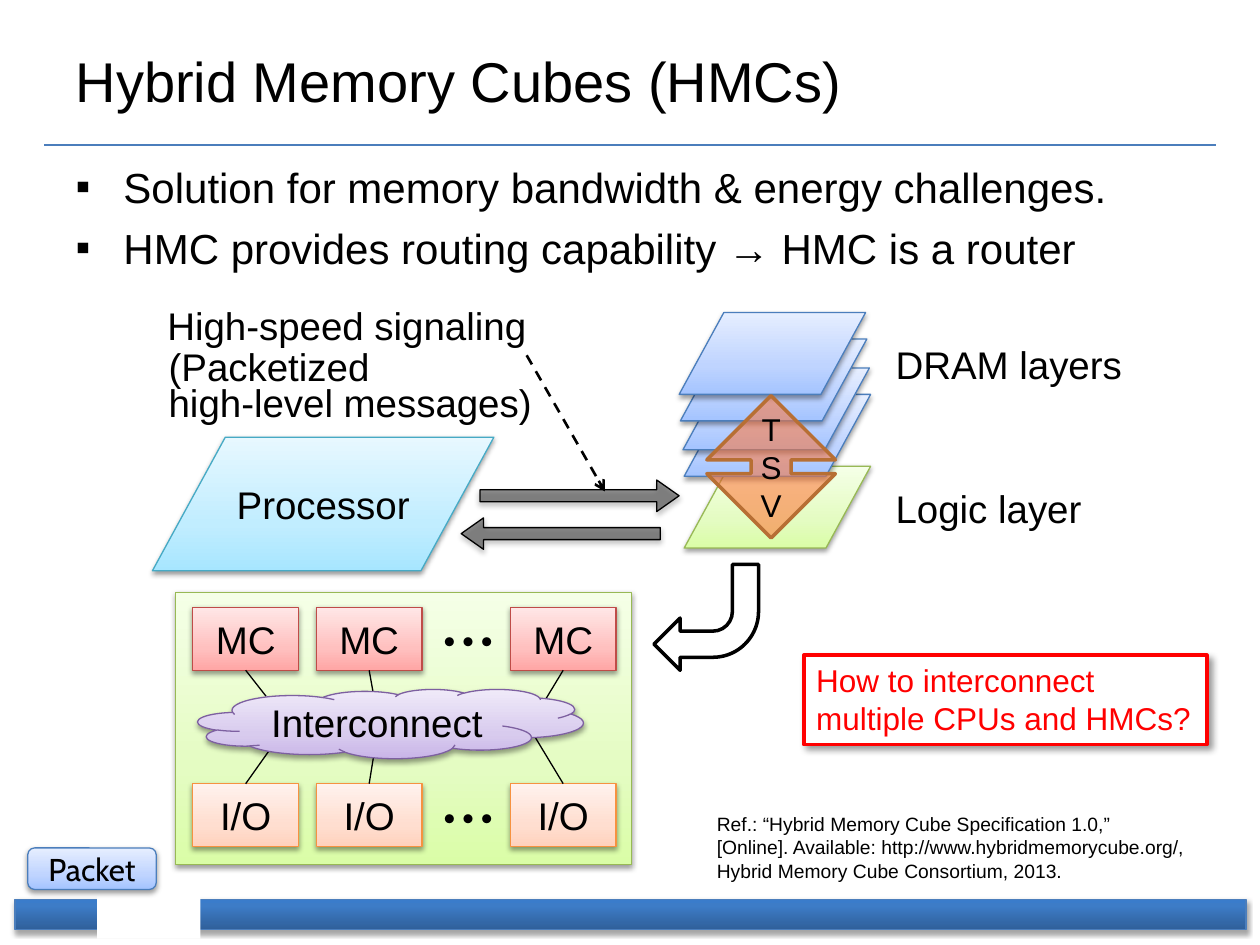
from lxml import etree
from pptx import Presentation
from pptx.dml.color import RGBColor
from pptx.enum import dml, shapes, text
from pptx.oxml import ns
from pptx.util import Inches, Pt

# Content
TITLE = "Hybrid Memory Cubes (HMCs)"
BULLETS = ["Solution for memory bandwidth & energy challenges.",
           "HMC provides routing capability → HMC is a router"]
REFERENCE = ["Ref.: “Hybrid Memory Cube Specification 1.0,” \n"
             "[Online]. Available: http://www.hybridmemorycube.org/,",
             "Hybrid Memory Cube Consortium, 2013."]
QUESTION = "How to interconnect\nmultiple CPUs and HMCs?"
LABELS = [  # text, box, line spacing
    ("DRAM layers", (7.01, 2.66, 2.02, 0.47), None),
    ("Logic layer", (7.01, 3.8, 1.86, 0.47), None),
    ("High-speed signaling", (1.23, 2.35, 3.65, 0.47), None),
    ("(Packetized \nhigh-level messages)", (1.24, 2.74, 3.65, 0.71), 0.8),
]
DRAM_LAYERS = [(5.43, 3.13), (5.42, 2.92), (5.4, 2.69), (5.39, 2.48)]
LAYER_SIZE = (1.48, 0.65)
SLANT = [0.546]

# Logic layer grid: column lefts, unit size, rows, wire ends under the cloud
COLUMNS = [1.53, 2.51, 4.05]
UNIT_W, UNIT_H = 0.84, 0.5
MC_TOP, IO_TOP = 4.82, 6.22
MC_WIRES = [(2.17, 5.6), (2.98, 5.6), (4.3, 5.6)]
IO_WIRES = [(2.17, 5.91), (2.98, 5.91), (4.18, 5.74)]

# Palettes: gradient stops from bottom to top, outline
BLUE = ([(0, "A4C4FF"), (35, "BFD4FF"), (100, "E6EEFF")], "4B7EBC")
GREEN = ([(0, "DAFDA7"), (35, "E4FCC2"), (100, "F5FFE7")], "98B955")
CYAN = ([(0, "A7E6FF"), (35, "C1EDFF"), (100, "E7F8FF")], "46AAC5")
RED = ([(0, "FFA6A5"), (35, "FFC0BF"), (100, "FFE7E7")], "BF4C48")
ORANGE = ([(0, "FFD2BD"), (35, "FFDED0"), (100, "FFF2ED")], "F69240")
PURPLE = ([(0, "C9B5E8"), (35, "D8CBEE"), (100, "F0EAF9")], "7D60A0")
FOOTER = ([(0, "2F5F99"), (80, "3D7CC7"), (100, "3A7CCB")], "4B7EBC")

# Shadows: opacity, blur, distance, direction
SOFT = (38, 3.1, 1.6, 90)
DEEP = (35, 3.1, 1.8, 90)
CORNER = (40, 4, 3, 45)

GEOMETRY = shapes.MSO_SHAPE
CENTER = text.PP_ALIGN.CENTER
MIDDLE = text.MSO_ANCHOR.MIDDLE

deck = Presentation()
deck.slide_width, deck.slide_height = Inches(10), Inches(7.5)
slide = deck.slides.add_slide(deck.slide_layouts[1])


def color(value):
    return RGBColor.from_string(value)


def sub(parent, tag, **attributes):
    child = etree.SubElement(parent, ns.qn(tag))
    for key, value in attributes.items():
        child.set(key, str(value))
    return child


def inches(box):
    return [Inches(value) for value in box]


def write(frame, paragraphs, size, font="Arial", ink="000000", align=None,
          spacing=None, bold=None):
    for i, content in enumerate(paragraphs):
        paragraph = frame.paragraphs[0] if i == 0 else frame.add_paragraph()
        paragraph.alignment = align
        paragraph.line_spacing = spacing
        for j, line in enumerate(content.split("\n")):
            if j:
                paragraph.add_line_break()
            run = paragraph.add_run()
            run.text = line
            run.font.size, run.font.name, run.font.bold = Pt(size), font, bold
            run.font.color.rgb = color(ink)
            sub(run.font._element, "a:ea", typeface=font)


def add_label(content, box, size=22, wrap=True, **style):
    frame = slide.shapes.add_textbox(*inches(box)).text_frame
    frame.word_wrap = wrap
    write(frame, content, size, **style)


def add_block(geometry, box, palette, shadow=None, weight=0.75, adj=(),
              rotation=0, alpha=None, label=None, size=22, font="Arial"):
    fill, outline = palette
    block = slide.shapes.add_shape(geometry, *inches(box))
    block.rotation = rotation
    for i, value in enumerate(adj):
        block.adjustments[i] = value
    if isinstance(fill, str):
        block.fill.solid()
        block.fill.fore_color.rgb = color(fill)
        if alpha:
            rgb = block._element.spPr.find(".//" + ns.qn("a:srgbClr"))
            sub(rgb, "a:alpha", val=alpha * 1000)
    else:
        block.fill.gradient()
        gradient = block._element.spPr.find(ns.qn("a:gradFill"))
        for child in list(gradient):
            gradient.remove(child)
        stops = sub(gradient, "a:gsLst")
        for position, value in fill:
            sub(sub(stops, "a:gs", pos=position * 1000), "a:srgbClr", val=value)
        sub(gradient, "a:lin", ang=270 * 60000, scaled=0)
    if outline:
        block.line.color.rgb = color(outline)
        block.line.width = Pt(weight)
    else:
        block.line.fill.background()
    block.shadow.inherit = False
    if shadow:
        opacity, blur, distance, direction = shadow
        effects = block._element.spPr.find(ns.qn("a:effectLst"))
        outer = sub(effects, "a:outerShdw", blurRad=Pt(blur), dist=Pt(distance),
                    dir=direction * 60000, rotWithShape=0)
        sub(sub(outer, "a:srgbClr", val="000000"), "a:alpha", val=opacity * 1000)
    if label:
        frame = block.text_frame
        frame.vertical_anchor = MIDDLE
        frame.margin_left = frame.margin_right = 0
        write(frame, [label], size, font, align=CENTER)
    return block


def add_line(start, end, ink="000000", weight=0.75):
    line = slide.shapes.add_connector(shapes.MSO_CONNECTOR.STRAIGHT,
                                      *inches(start + end))
    line.line.color.rgb = color(ink)
    line.line.width = Pt(weight)
    sub(line._element.spPr, "a:effectLst")
    return line


# Title and bullets
title, body = slide.placeholders
title.left, title.top, title.width, title.height = inches((0.5, 0.13, 9, 1.01))
title.text_frame.vertical_anchor = MIDDLE
write(title.text_frame, [TITLE], 32, align=text.PP_ALIGN.LEFT)
body.left, body.top, body.width, body.height = inches((0.5, 1.23, 9, 5.67))
write(body.text_frame, BULLETS, 24)
for i, paragraph in enumerate(body.text_frame.paragraphs):
    paragraph.space_before = Pt(6 if i else 0)
    properties = paragraph._p.get_or_add_pPr()
    properties.set("marL", str(Inches(0.38)))
    properties.set("indent", str(-Inches(0.38)))
    sub(properties, "a:buFont", typeface="Arial")
    sub(properties, "a:buChar", char="▪")

# Header rule and footer bar
add_block(GEOMETRY.RECTANGLE, (0.12, 7.14, 9.77, 0.24), FOOTER, DEEP)
add_line((0.35, 1.15), (9.65, 1.15), "4B7EBC")
add_block(GEOMETRY.RECTANGLE, (0.77, 7.06, 0.82, 0.39), ("FFFFFF", None))

# Processor, links and memory stack
add_block(GEOMETRY.PARALLELOGRAM, (5.43, 3.7) + LAYER_SIZE, GREEN, SOFT, adj=SLANT)
for left, top, rotation in [(3.81, 3.81, 0), (3.66, 4.11, 180)]:
    add_block(GEOMETRY.RIGHT_ARROW, (left, top, 1.58, 0.25), ("404040", "000000"),
              DEEP, adj=[0.38, 0.71], rotation=rotation, alpha=56)
add_block(GEOMETRY.PARALLELOGRAM, (1.21, 3.47, 2.71, 1.06), CYAN, SOFT,
          adj=SLANT, label="Processor")
pointer = add_line((4.18, 2.82), (4.8, 3.9), weight=1.5)
pointer.line.dash_style = dml.MSO_LINE.DASH
sub(pointer.line._get_or_add_ln(), "a:tailEnd", type="arrow")
for corner in DRAM_LAYERS:
    add_block(GEOMETRY.PARALLELOGRAM, corner + LAYER_SIZE, BLUE, SOFT, adj=SLANT)
add_block(GEOMETRY.UP_DOWN_ARROW, (5.61, 3.14, 1.02, 1.13), ("FF7538", "B76F34"),
          weight=2, adj=[0.694, 0.312], alpha=56, label="TSV", size=18)
for content, box, spacing in LABELS:
    add_label([content], box, spacing=spacing)

# Inside the logic layer
add_block(GEOMETRY.RECTANGLE, (1.39, 4.7, 3.62, 2.16), GREEN, SOFT)
add_block(GEOMETRY.BENT_ARROW, (5.19, 4.48, 0.83, 0.84), ("FFFFFF", "000000"),
          weight=2, rotation=180)
for name, top, edge, palette, wires, dots_top in [
        ("MC", MC_TOP, MC_TOP + UNIT_H, RED, MC_WIRES, 4.77),
        ("I/O", IO_TOP, IO_TOP, ORANGE, IO_WIRES, 6.18)]:
    for left, wire_end in zip(COLUMNS, wires):
        add_block(GEOMETRY.RECTANGLE, (left, top, UNIT_W, UNIT_H), palette, SOFT,
                  label=name)
        add_line((left + UNIT_W / 2, edge), wire_end)
    add_label(["…"], (3.4, dots_top, 0.63, 0.64), 32, wrap=False,
              font="Noto Sans CJK KR", bold=True)
add_block(GEOMETRY.CLOUD, (1.57, 5.47, 3.06, 0.55), PURPLE, SOFT, label="Interconnect")

# Reference, question and packet
add_label(REFERENCE, (5.59, 6.4, 4.41, 0.66), 11)
question = add_block(GEOMETRY.RECTANGLE, (6.38, 5.2, 3.2, 0.71),
                     ("FFFFFF", "FF0000"), CORNER, weight=2)
question.text_frame.word_wrap = False
question.text_frame.vertical_anchor = text.MSO_ANCHOR.TOP
write(question.text_frame, [QUESTION], 18, ink="FF0000", align=text.PP_ALIGN.LEFT)
add_block(GEOMETRY.ROUNDED_RECTANGLE, (0.22, 6.73, 1.02, 0.33), BLUE, SOFT,
          label="Packet", size=18, font="Cabin")

deck.save("out.pptx")
